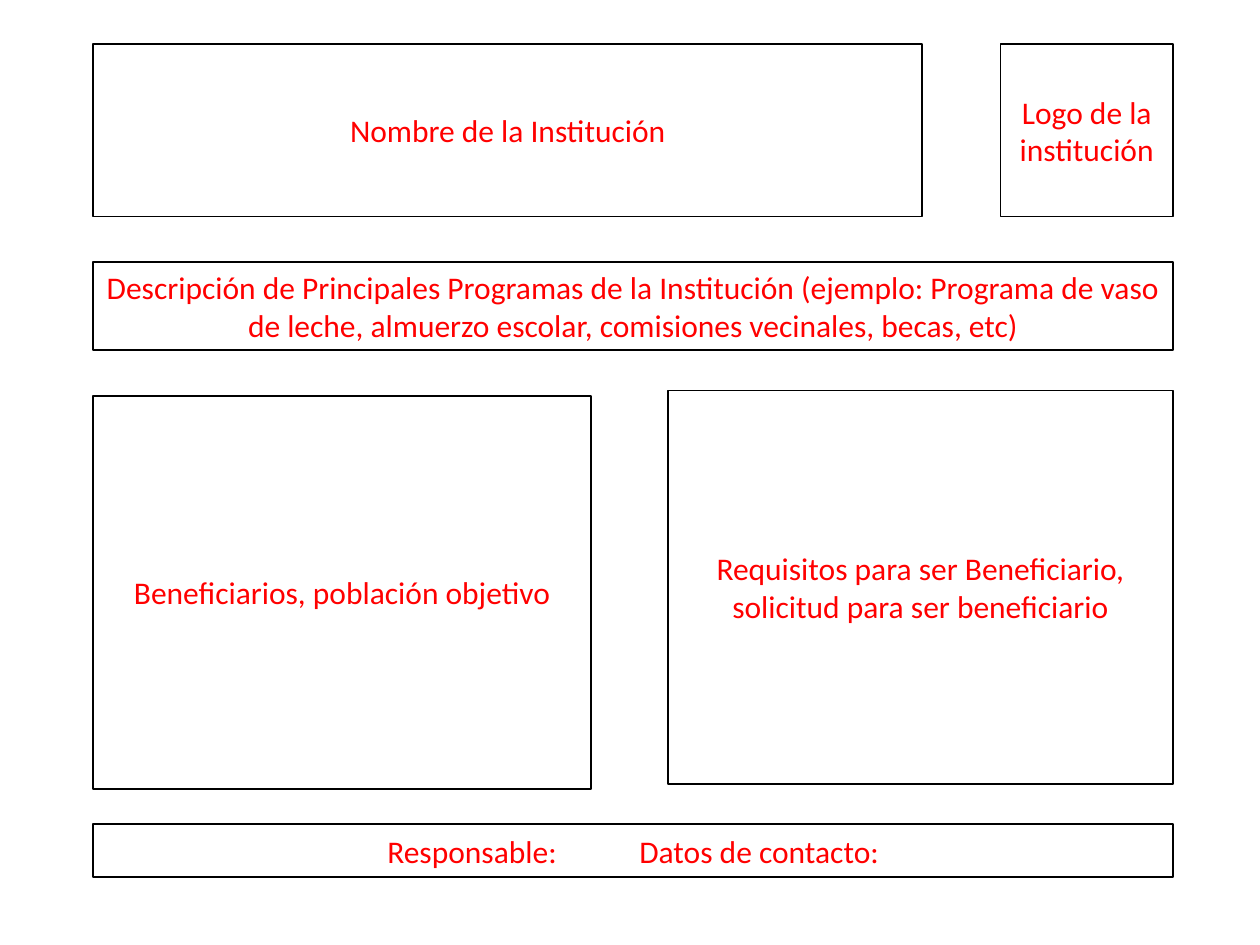
"""Build a one-page form for presenting an institution's social programs."""
from typing import Any, NamedTuple

from pptx import Presentation
from pptx import util as u
from pptx.dml.color import RGBColor
from pptx.enum import shapes, text

HUES = {"line": "000000", "text": "FF0000"}
LEFT, RIGHT = 0.74, 9.31
WIDE = RIGHT - LEFT


class Box(NamedTuple):
    label: str
    left: float
    top: float
    width: float
    height: float


BOXES = [
    Box("Logo de la institución", RIGHT - 1.37, 0.35, 1.37, 1.37),
    Box("Nombre de la Institución", LEFT, 0.35, 6.58, 1.37),
    Box("Descripción de Principales Programas de la Institución (ejemplo: "
        "Programa de vaso de leche, almuerzo escolar, comisiones vecinales, "
        "becas, etc)", LEFT, 2.08, WIDE, 0.7),
    Box("Responsable:\t\tDatos de contacto:", LEFT, 6.54, WIDE, 0.42),
    Box("Beneficiarios, población objetivo", LEFT, 3.14, 3.95, 3.12),
    Box("Requisitos para ser Beneficiario, solicitud para ser beneficiario",
        RIGHT - 4.01, 3.1, 4.01, 3.12),
]


def write(frame: Any, label: str, *, size: float = 18, font: str = "Calibri",
          hue: str = HUES["text"]) -> None:
    """Put centred, wrapped text in a frame."""
    frame.word_wrap = True
    frame.vertical_anchor = text.MSO_ANCHOR.MIDDLE
    para = frame.paragraphs[0]
    para.alignment = text.PP_ALIGN.CENTER
    run = para.add_run()
    run.text = label
    run.font.size = u.Pt(size)
    run.font.name = font
    run.font.color.rgb = RGBColor.from_string(hue)


def draw(slide: Any, box: Box) -> None:
    """Draw an outlined box with its label."""
    spot = [u.Inches(side) for side in box[1:]]
    shape = slide.shapes.add_shape(shapes.MSO_SHAPE.RECTANGLE, *spot)
    shape.shadow.inherit = False
    shape.fill.background()
    shape.line.color.rgb = RGBColor.from_string(HUES["line"])
    shape.line.width = u.Pt(1)
    write(shape.text_frame, box.label)


def main() -> None:
    """Make the slide and save it."""
    deck = Presentation()
    deck.slide_width, deck.slide_height = u.Inches(10), u.Inches(7.5)
    slide = deck.slides.add_slide(deck.slide_layouts[6])
    for box in BOXES:
        draw(slide, box)
    deck.save("out.pptx")


if __name__ == "__main__":
    main()
